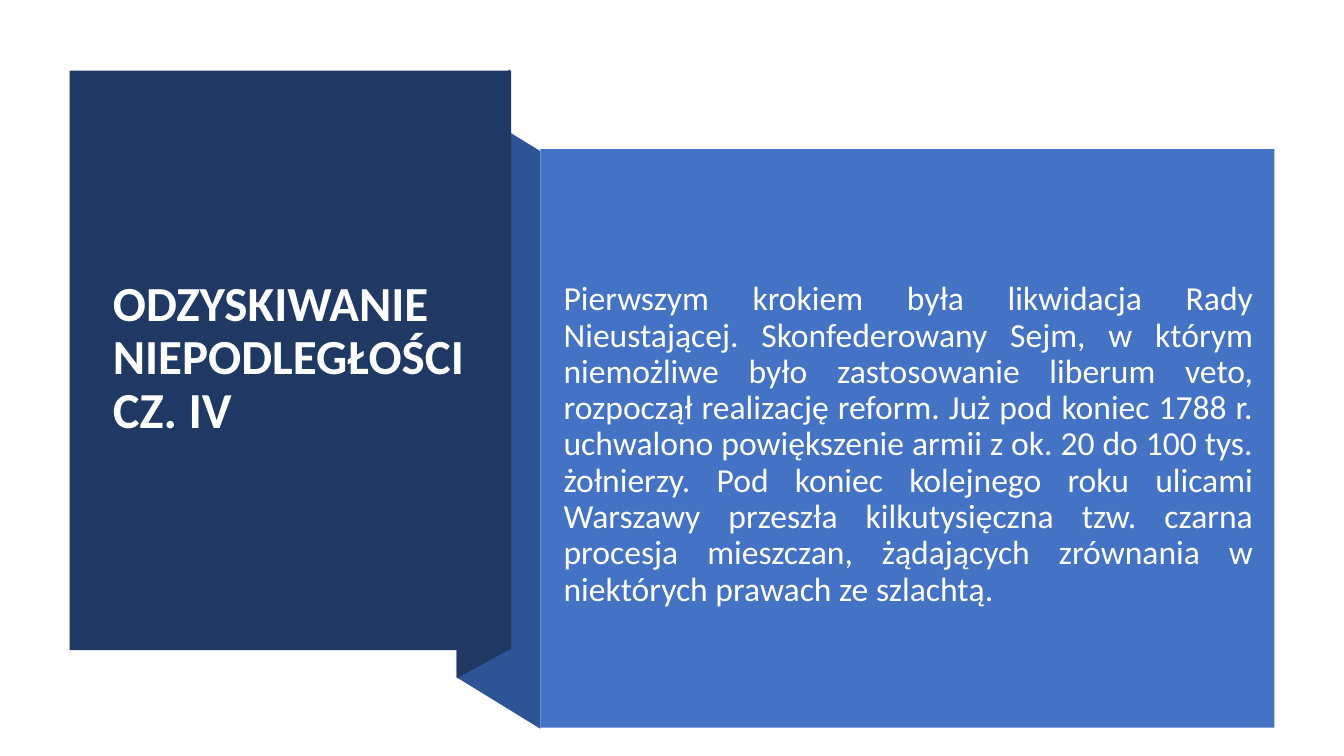
from pptx import Presentation
from pptx.dml.color import RGBColor
from pptx.enum import shapes, text
from pptx.util import Inches, Pt
from lxml import etree

NAVY = RGBColor(0x1F, 0x38, 0x64)
FOLD_BLUE = RGBColor(0x2F, 0x54, 0x96)
PANEL_BLUE = RGBColor(0x44, 0x72, 0xC4)
WHITE = RGBColor(0xFF, 0xFF, 0xFF)
OFF_WHITE = RGBColor(0xFE, 0xFF, 0xFF)

TITLE = [("ODZYSKIWANIE NIEPODLEGŁOŚCI", 35), ("CZ. IV", 36)]
BODY = (
    "Pierwszym krokiem była likwidacja Rady Nieustającej. Skonfederowany Sejm, "
    "w którym niemożliwe było zastosowanie liberum veto, rozpoczął realizację "
    "reform. Już pod koniec 1788 r. uchwalono powiększenie armii z ok. 20 do "
    "100 tys. żołnierzy. Pod koniec kolejnego roku ulicami Warszawy przeszła "
    "kilkutysięczna tzw. czarna procesja mieszczan, żądających zrównania "
    "w niektórych prawach ze szlachtą."
)

prs = Presentation()
prs.slide_width, prs.slide_height = Inches(13.33), Inches(7.5)
s = prs.slides.add_slide(prs.slide_layouts[1])
title, body = s.placeholders


def paint(sp, color):
    sp.shadow.inherit = False
    sp.fill.solid()
    sp.fill.fore_color.rgb = color
    sp.line.fill.background()


def add_run(p, words, size, color, bold):
    r = p.add_run()
    r.text = words
    r.font.name = "Calibri"
    r.font.size = Pt(size)
    r.font.bold = bold
    r.font.color.rgb = color


folds = [
    (FOLD_BLUE, [(5.36, 7.23), (4.53, 6.72), (4.53, 0.99), (5.36, 1.5)]),
    (NAVY, [(5.06, 6.44), (4.53, 6.73), (4.53, 0.98), (5.06, 0.69)]),
]
for color, corners in folds:
    points = [(Inches(x), Inches(y)) for x, y in corners]
    outline = s.shapes.build_freeform(*points[0], scale=1.0)
    outline.add_line_segments(points[1:], close=True)
    paint(outline.convert_to_shape(), color)

panels = [
    (NAVY, (0.69, 0.7, 4.38, 5.75), title, (1.02, 1.07, 3.71, 4.99)),
    (PANEL_BLUE, (5.36, 1.48, 7.28, 5.74), body, (5.49, 1.74, 7.04, 5.35)),
]
for color, panel_box, holder, text_box in panels:
    sp = s.shapes.add_shape(shapes.MSO_SHAPE.RECTANGLE, *map(Inches, panel_box))
    paint(sp, color)
    sp.element.addnext(holder.element)
    holder.left, holder.top, holder.width, holder.height = map(Inches, text_box)
    tf = holder.text_frame
    tf.word_wrap = True
    tf.auto_size = text.MSO_AUTO_SIZE.NONE
    tf.vertical_anchor = text.MSO_ANCHOR.MIDDLE
    p = tf.paragraphs[0]
    p.line_spacing = 0.9
    p.space_before = Pt(0)

p = title.text_frame.paragraphs[0]
p.alignment = text.PP_ALIGN.LEFT
for i, (words, size) in enumerate(TITLE):
    if i:
        p.add_line_break()
    add_run(p, words, size, WHITE, True)

p = body.text_frame.paragraphs[0]
p.alignment = text.PP_ALIGN.JUSTIFY
pPr = p._p.get_or_add_pPr()
pPr.set("marL", "0")
pPr.set("indent", "0")
etree.SubElement(pPr, "{http://schemas.openxmlformats.org/drawingml/2006/main}buNone")
add_run(p, BODY, 24, OFF_WHITE, False)

prs.save("out.pptx")
